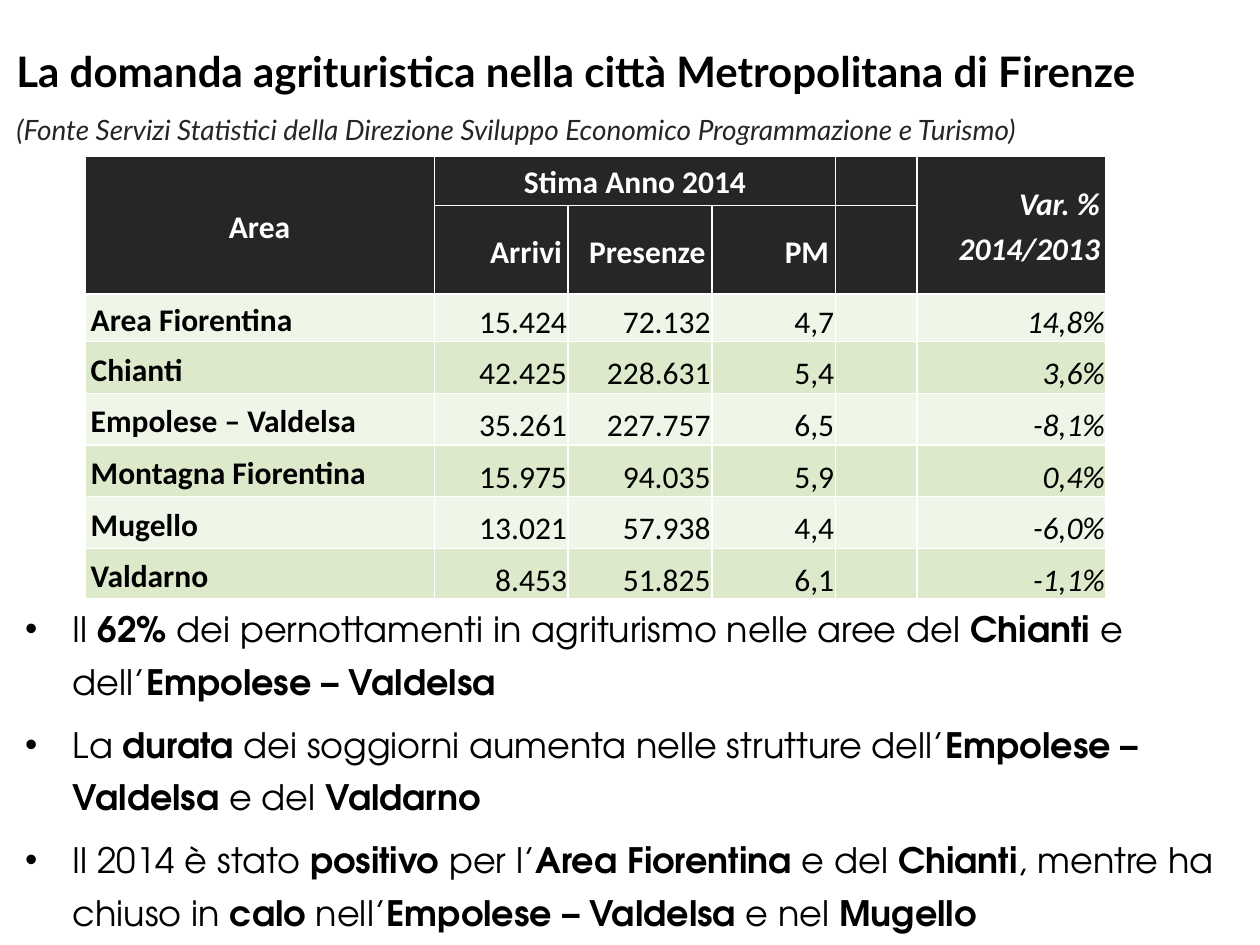
from dataclasses import dataclass

from lxml.etree import SubElement
from pptx import Presentation
from pptx.dml.color import RGBColor
from pptx.enum.text import MSO_ANCHOR, MSO_AUTO_SIZE, PP_ALIGN
from pptx.oxml.ns import qn
from pptx.util import Inches, Pt


@dataclass(frozen=True)
class Theme:
    black: str = "000000"
    dark: str = "262626"
    white: str = "FFFFFF"
    bands: tuple = ("EFF5E7", "DCEACB")
    head: str = "Lato"
    grid: str = "Calibri"
    body: str = "TeX Gyre Adventor"
    title: int = 24
    source: int = 16
    cell: int = 18
    point: int = 20
    thin: float = 1
    thick: float = 2.25


THEME = Theme()

TITLE = (
    "La domanda agrituristica nella città Metropolitana di Firenze",
    "(Fonte Servizi Statistici della Direzione Sviluppo Economico Programmazione e Turismo)",
)
HEADS = [
    ["Area", "Stima Anno 2014", "", "", "", "Var. % 2014/2013"],
    ["", "Arrivi", "Presenze", "PM", "", ""],
]
AREAS = [
    ["Area Fiorentina", "15.424", "72.132", "4,7", "", "14,8%"],
    ["Chianti", "42.425", "228.631", "5,4", "", "3,6%"],
    ["Empolese – Valdelsa", "35.261", "227.757", "6,5", "", "-8,1%"],
    ["Montagna Fiorentina", "15.975", "94.035", "5,9", "", "0,4%"],
    ["Mugello", "13.021", "57.938", "4,4", "", "-6,0%"],
    ["Valdarno", "8.453", "51.825", "6,1", "", "-1,1%"],
]
WIDTHS = [2.78, 1.06, 1.14, 0.98, 0.65, 1.5]
HEIGHTS = [0.4, 0.4, 0.38] + [0.41] * 5
POINTS = [
    "Il *62%* dei pernottamenti in agriturismo nelle aree del *Chianti* e dell’*Empolese – Valdelsa*",
    "La *durata* dei soggiorni aumenta nelle strutture dell’*Empolese – Valdelsa* e del *Valdarno*",
    "Il 2014 è stato *positivo* per l’*Area Fiorentina* e del *Chianti*, mentre ha chiuso in *calo* "
    "nell’*Empolese – Valdelsa* e nel *Mugello*",
]


def style(font, name, size, color, bold=False, italic=False):
    font.name, font.size = name, Pt(size)
    font.bold, font.italic = bold, italic
    font.color.rgb = RGBColor.from_string(color)


def place(shape, box):
    shape.left, shape.top, shape.width, shape.height = (Inches(n) for n in box)


def add_title(slide, box):
    shape = slide.shapes.title
    place(shape, box)
    frame = shape.text_frame
    frame.text = "\n".join(TITLE)
    frame.word_wrap = True
    frame.auto_size = MSO_AUTO_SIZE.NONE
    frame.vertical_anchor = MSO_ANCHOR.TOP
    for para in frame.paragraphs:
        para.alignment = PP_ALIGN.LEFT
        para.line_spacing = 1.5
    name, source = frame.paragraphs
    style(name.runs[0].font, THEME.head, THEME.title, THEME.black, bold=True)
    style(source.runs[0].font, THEME.head, THEME.source, THEME.dark, italic=True)


def set_edge(cell, side, width):
    line = SubElement(cell._tc.get_or_add_tcPr(), qn(f"a:ln{side}"), w=str(Pt(width)))
    fill = SubElement(line, qn("a:solidFill"))
    SubElement(fill, qn("a:srgbClr"), val=THEME.white)


def set_edges(cell, row, col):
    outer = {
        "L": col == 0,
        "R": col == len(WIDTHS) - 1,
        "T": row == 0,
        "B": row == len(HEIGHTS) - 1,
    }
    for side, edge in outer.items():
        if col == 4 and (row, side) in ((0, "B"), (1, "T")):
            continue
        set_edge(cell, side, THEME.thick if edge else THEME.thin)


def set_cell(cell, text, row, col):
    head = row < len(HEADS)
    label = head or col == 0
    set_edges(cell, row, col)
    cell.fill.solid()
    back = THEME.dark if head else THEME.bands[row % 2]
    cell.fill.fore_color.rgb = RGBColor.from_string(back)
    cell.margin_left = cell.margin_right = Inches(0.05 if label else 0.01)
    cell.margin_top = Inches(0 if label else 0.01)
    cell.margin_bottom = 0
    cell.vertical_anchor = MSO_ANCHOR.MIDDLE if label else MSO_ANCHOR.BOTTOM
    if not text:
        return
    cell.text_frame.text = text
    para = cell.text_frame.paragraphs[0]
    para.line_spacing = 1.15
    if row == 0 and col < 2:
        para.alignment = PP_ALIGN.CENTER
    else:
        para.alignment = PP_ALIGN.RIGHT if col else PP_ALIGN.LEFT
    color = THEME.white if head else THEME.black
    style(para.runs[0].font, THEME.grid, THEME.cell, color, label, col == 5)


def add_grid(slide, box):
    rows = HEADS + AREAS
    size = (Inches(n) for n in box)
    table = slide.shapes.add_table(len(rows), len(WIDTHS), *size).table
    for col, width in zip(table.columns, WIDTHS):
        col.width = Inches(width)
    for row, height in zip(table.rows, HEIGHTS):
        row.height = Inches(height)
    for r, row in enumerate(rows):
        for c, text in enumerate(row):
            set_cell(table.cell(r, c), text, r, c)
    for start, end in (((0, 0), (1, 0)), ((0, 1), (0, 3)), ((0, 5), (1, 5))):
        table.cell(*start).merge(table.cell(*end))


def add_points(slide, box):
    shape = slide.shapes.add_textbox(*(Inches(n) for n in box))
    frame = shape.text_frame
    frame.word_wrap = True
    frame.text = "\n" * (len(POINTS) - 1)
    for para, text in zip(frame.paragraphs, POINTS):
        para.line_spacing, para.space_after = Pt(30), Pt(6)
        props = para._p.get_or_add_pPr()
        props.set("marL", str(Inches(0.38)))
        props.set("indent", str(Inches(-0.38)))
        SubElement(props, qn("a:buFont"), typeface="Arial")
        SubElement(props, qn("a:buChar"), char="•")
        for i, part in enumerate(text.split("*")):
            if part:
                run = para.add_run()
                run.text = part
                style(run.font, THEME.body, THEME.point, THEME.black, bold=i % 2 == 1)


def main():
    deck = Presentation()
    deck.slide_width, deck.slide_height = Inches(10), Inches(7.5)
    slide = deck.slides.add_slide(deck.slide_layouts[5])
    add_title(slide, (0.03, 0.11, 9.92, 1.1))
    add_grid(slide, (0.67, 1.23, sum(WIDTHS), sum(HEIGHTS)))
    add_points(slide, (0.1, 4.69, 9.69, 2.79))
    deck.save("out.pptx")


if __name__ == "__main__":
    main()
